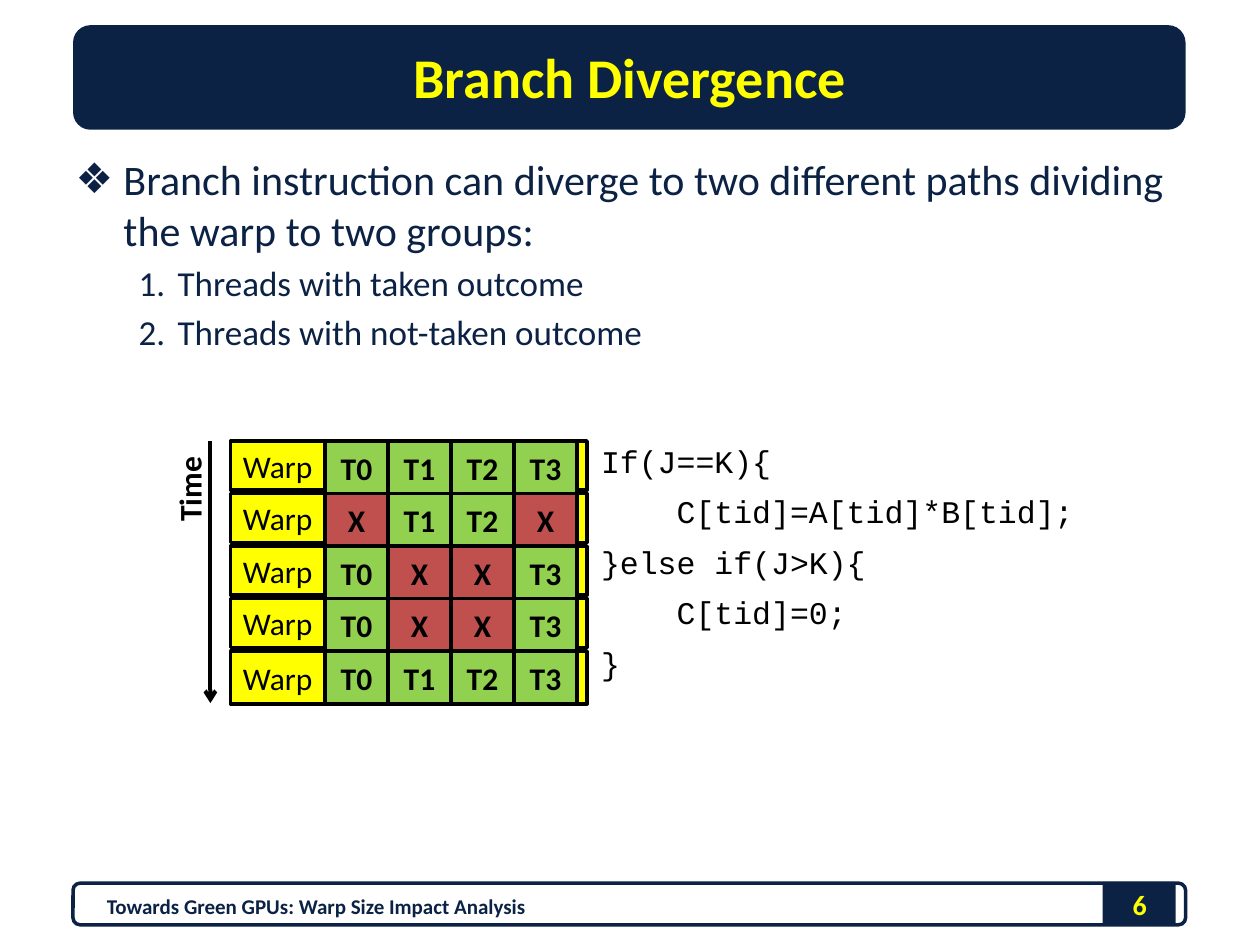
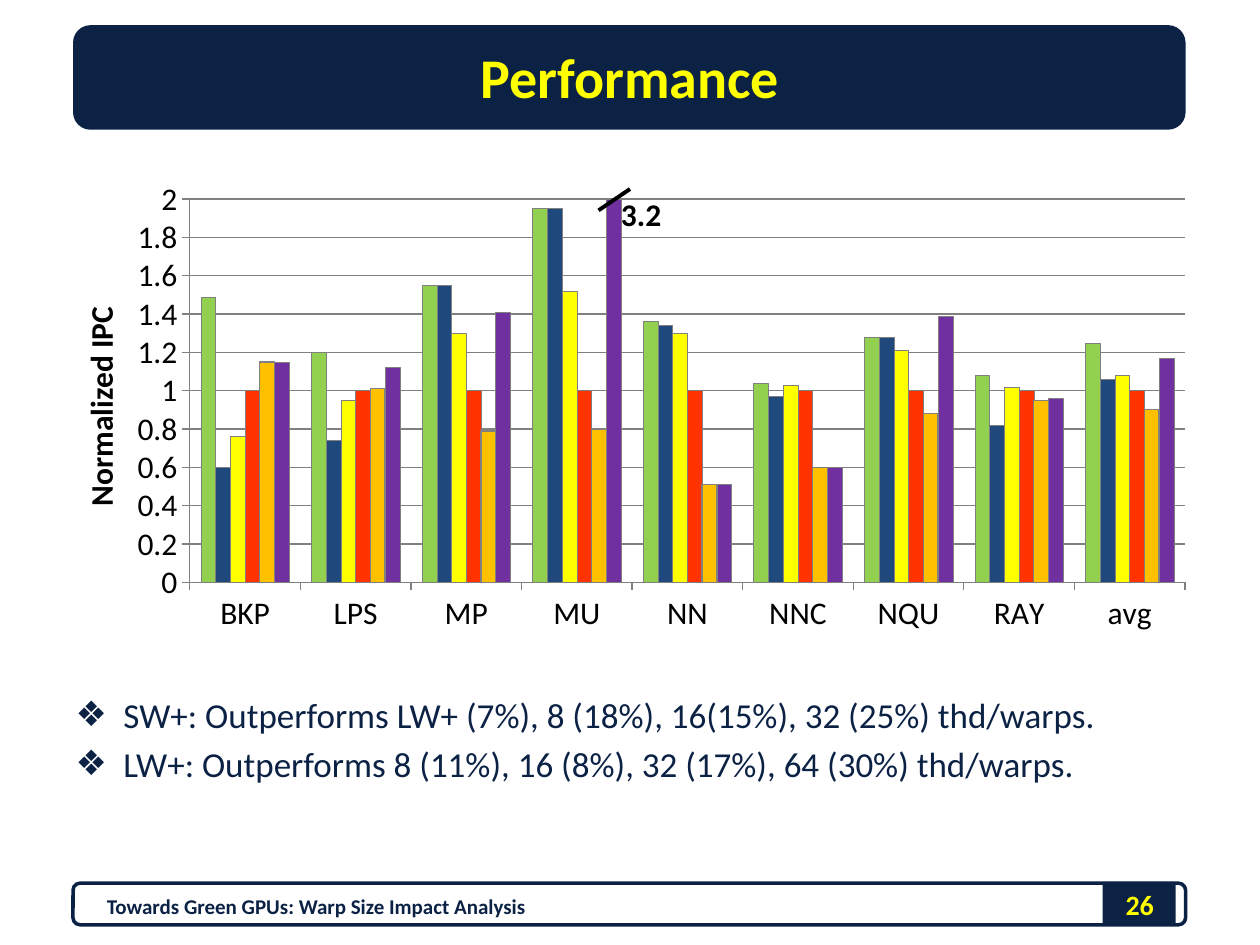
from dataclasses import dataclass

from lxml.etree import SubElement
from pptx import Presentation
from pptx.chart.data import CategoryChartData
from pptx.dml.color import RGBColor
from pptx.enum.chart import XL_CHART_TYPE, XL_TICK_MARK
from pptx.enum.shapes import MSO_CONNECTOR, MSO_SHAPE
from pptx.enum.text import MSO_ANCHOR, MSO_AUTO_SIZE, PP_ALIGN
from pptx.oxml.ns import qn
from pptx.util import Inches, Pt

NAVY, YELLOW, BLACK = "0B2245", "FFFF00", "000000"
GREEN, RED, GRAY = "92D050", "C0504D", "808080"
SANS, MONO = "Calibri", "Courier New"
FOOTER = "Towards Green GPUs: Warp Size Impact Analysis"


@dataclass(frozen=True)
class Box:
    left: float
    top: float
    width: float
    height: float

    def emu(self) -> tuple:
        return tuple(Inches(n) for n in (self.left, self.top, self.width, self.height))


@dataclass(frozen=True)
class Style:
    size: float = 18
    color: str = BLACK
    bold: bool = False
    face: str = SANS


@dataclass(frozen=True)
class Item:
    text: str
    size: float = 20
    number: bool = False


@dataclass(frozen=True)
class Series:
    name: str
    color: str
    values: tuple
    line: float = 0.25


PLAIN, BOLD = Style(), Style(bold=True)

LIST = [
    Item("Branch instruction can diverge to two different paths dividing "
         "the warp to two groups:", 24),
    Item("Threads with taken outcome", number=True),
    Item("Threads with not-taken outcome", number=True),
]
RESULTS = [
    Item("SW+: Outperforms LW+ (7%), 8 (18%), 16(15%), 32 (25%) thd/warps."),
    Item("LW+: Outperforms 8 (11%), 16 (8%), 32 (17%), 64 (30%) thd/warps."),
]
CODE = [
    "If(J==K){",
    "    C[tid]=A[tid]*B[tid];",
    "}else if(J>K){",
    "    C[tid]=0;",
    "}",
]
# Active threads of the warp at each step
STEPS = [{0, 1, 2, 3}, {1, 2}, {0, 3}, {0, 3}, {0, 1, 2, 3}]

BENCHES = ["BKP", "LPS", "MP", "MU", "NN", "NNC", "NQU", "RAY", "avg"]
SERIES = [
    Series("SW+", GREEN, (1.49, 1.2, 1.55, 1.95, 1.36, 1.04, 1.28, 1.08, 1.25)),
    Series("8", "1F497D", (0.6, 0.74, 1.55, 1.95, 1.34, 0.97, 1.28, 0.82, 1.06)),
    Series("16", YELLOW, (0.76, 0.95, 1.3, 1.52, 1.3, 1.03, 1.21, 1.02, 1.08)),
    Series("32", "FF3300", (1,) * 9),
    Series("64", "FFC000", (1.15, 1.01, 0.79, 0.8, 0.51, 0.6, 0.88, 0.95, 0.9), 0.75),
    Series("LW+", "7030A0", (1.15, 1.12, 1.41, 3.2, 0.51, 0.6, 1.39, 0.96, 1.17)),
]


def rgb(color: str) -> RGBColor:
    return RGBColor.from_string(color)


def set_font(font, style: Style) -> None:
    font.name, font.size, font.bold = style.face, Pt(style.size), style.bold
    font.color.rgb = rgb(style.color)


def write(para, text: str, style: Style) -> None:
    run = para.add_run()
    run.text = text
    set_font(run.font, style)


def set_line(line, color: str, width: float) -> None:
    line.color.rgb = rgb(color)
    line.width = Pt(width)


def add_block(slide, kind, box: Box, fill: str = "", line: str = ""):
    shape = slide.shapes.add_shape(kind, *box.emu())
    shape.shadow.inherit = False
    if fill:
        shape.fill.solid()
        shape.fill.fore_color.rgb = rgb(fill)
    else:
        shape.fill.background()
    if line:
        set_line(shape.line, line, 2)
    else:
        shape.line.fill.background()
    return shape


def label(shape, text: str, style: Style, align=PP_ALIGN.LEFT) -> None:
    frame = shape.text_frame
    frame.vertical_anchor = MSO_ANCHOR.MIDDLE
    para = frame.paragraphs[0]
    para.alignment = align
    write(para, text, style)


def add_text(slide, box: Box, text: str, style: Style, align=PP_ALIGN.LEFT, wrap=True):
    shape = slide.shapes.add_textbox(*box.emu())
    shape.text_frame.word_wrap = wrap
    label(shape, text, style, align)
    return shape


def add_line(slide, x1: float, y1: float, x2: float, y2: float, arrow=False) -> None:
    ends = (Inches(n) for n in (x1, y1, x2, y2))
    link = slide.shapes.add_connector(MSO_CONNECTOR.STRAIGHT, *ends)
    set_line(link.line, BLACK, 2.25)
    props = link.element.spPr
    if arrow:
        SubElement(props.find(qn("a:ln")), qn("a:tailEnd"), type="arrow")
    SubElement(props, qn("a:effectLst"))


def add_item(para, item: Item, first: bool) -> None:
    left, hang = (0.81, 0.31) if item.number else (0.38, 0.38)
    para.level = int(item.number)
    para.space_before = Pt(0 if first else item.size * 0.2)
    props = para._p.get_or_add_pPr()
    props.set("marL", str(Inches(left)))
    props.set("indent", str(-Inches(hang)))
    if item.number:
        SubElement(props, qn("a:buAutoNum"), type="arabicPeriod")
    else:
        SubElement(props, qn("a:buChar"), char="❖")
    write(para, item.text, Style(item.size, NAVY))


def add_slide(deck, title: str, number: int, items: list, box: Box):
    """Add a slide with the shared bands, footer, title and list."""
    slide = deck.slides.add_slide(deck.slide_layouts[1])
    add_block(slide, MSO_SHAPE.RECTANGLE, Box(8.75, 7, 0.58, 0.33), NAVY)
    add_block(slide, MSO_SHAPE.ROUNDED_RECTANGLE, Box(0.58, 7.01, 8.83, 0.33), line=NAVY)
    add_block(slide, MSO_SHAPE.ROUNDED_RECTANGLE, Box(0.58, 0.2, 8.83, 0.83), NAVY)
    head, body = slide.shapes.title, slide.placeholders[1]
    for shape, place in ((head, Box(0.5, 0.17, 9, 0.87)), (body, box)):
        shape.left, shape.top, shape.width, shape.height = place.emu()
        shape.text_frame.auto_size = MSO_AUTO_SIZE.NONE
        slide.shapes.element.append(shape.element)  # in front of the bands
    label(head, title, Style(32, YELLOW, True), PP_ALIGN.CENTER)
    frame = body.text_frame
    for i, item in enumerate(items):
        add_item(frame.add_paragraph() if i else frame.paragraphs[0], item, i == 0)
    add_text(slide, Box(8.67, 6.98, 0.75, 0.4), str(number),
             Style(16, YELLOW, True), PP_ALIGN.CENTER)
    add_text(slide, Box(0.75, 6.99, 5.58, 0.4), FOOTER, Style(12, NAVY, True))
    return slide


def add_code(slide) -> None:
    box = Box(4.67, 3.5, 4.08, 1.9)
    table = slide.shapes.add_table(len(CODE), 1, *box.emu()).table
    table.first_row = table.horz_banding = False
    for i, text in enumerate(CODE):
        cell = table.cell(i, 0)
        cell.fill.background()
        write(cell.text_frame.paragraphs[0], text, Style(face=MONO))


def add_warps(slide) -> None:
    tops = [3.5 + i * 1.25 / 3 for i in range(len(STEPS))]
    for top in tops:
        high = 0.42 if top == tops[-1] else 0.39
        bar = add_block(slide, MSO_SHAPE.RECTANGLE, Box(1.83, top, 2.83, high), YELLOW, BLACK)
        label(bar, "Warp", PLAIN)
    for top, active in zip(tops, STEPS):
        for i in range(4):
            fill, text = (GREEN, f"T{i}") if i in active else (RED, "X")
            box = Box(2.58 + i * 0.5, top, 0.5, 0.42)
            cell = add_block(slide, MSO_SHAPE.RECTANGLE, box, fill, BLACK)
            label(cell, text, BOLD, PP_ALIGN.CENTER)


def set_plot(chart, x: float, y: float, w: float, h: float) -> None:
    """Fix the inner plot area as fractions of the chart."""
    area = chart.element.xpath("c:chart/c:plotArea")[0]
    for old in area.findall(qn("c:layout")):
        area.remove(old)
    layout = SubElement(area, qn("c:layout"))
    area.insert(0, layout)
    manual = SubElement(layout, qn("c:manualLayout"))
    parts = [("layoutTarget", "inner"), ("xMode", "edge"), ("yMode", "edge"),
             ("x", x), ("y", y), ("w", w), ("h", h)]
    for tag, val in parts:
        SubElement(manual, qn(f"c:{tag}"), val=str(val))


def add_bars(slide) -> None:
    data = CategoryChartData()
    data.categories = BENCHES
    for row in SERIES:
        data.add_series(row.name, row.values)
    box = Box(0.58, 1.33, 8.83, 3.91)
    chart = slide.shapes.add_chart(XL_CHART_TYPE.COLUMN_CLUSTERED, *box.emu(), data).chart
    chart.has_title = chart.has_legend = False
    set_font(chart.font, PLAIN)
    plot = chart.plots[0]
    plot.vary_by_categories = False
    plot.gap_width, plot.overlap = 150, 0
    for bars, row in zip(plot.series, SERIES):
        bars.format.fill.solid()
        bars.format.fill.fore_color.rgb = rgb(row.color)
        set_line(bars.format.line, GRAY, row.line)
    axis = chart.value_axis
    axis.minimum_scale, axis.maximum_scale, axis.major_unit = 0, 2, 0.2
    axis.has_major_gridlines = True
    set_line(axis.major_gridlines.format.line, GRAY, 0.75)
    for side in (axis, chart.category_axis):
        side.major_tick_mark = XL_TICK_MARK.OUTSIDE
        set_line(side.format.line, GRAY, 0.75)
    write(axis.axis_title.text_frame.paragraphs[0], "Normalized IPC", BOLD)
    set_plot(chart, 0.105, 0.064, 0.895, 0.778)


def main() -> None:
    deck = Presentation()
    deck.slide_width, deck.slide_height = Inches(10), Inches(7.5)

    slide = add_slide(deck, "Branch Divergence", 6, LIST, Box(0.5, 1.17, 9, 2))
    add_code(slide)
    add_warps(slide)
    time = add_text(slide, Box(1.14, 3.68, 0.72, 0.4), "Time", BOLD, wrap=False)
    time.rotation = 270
    add_line(slide, 1.67, 3.5, 1.67, 5.58, arrow=True)

    slide = add_slide(deck, "Performance", 26, RESULTS, Box(0.5, 5.45, 9, 1.25))
    add_bars(slide)
    add_line(slide, 4.75, 1.67, 5, 1.5)
    add_text(slide, Box(4.83, 1.5, 0.52, 0.4), "3.2", BOLD, wrap=False)

    deck.save("out.pptx")


if __name__ == "__main__":
    main()
